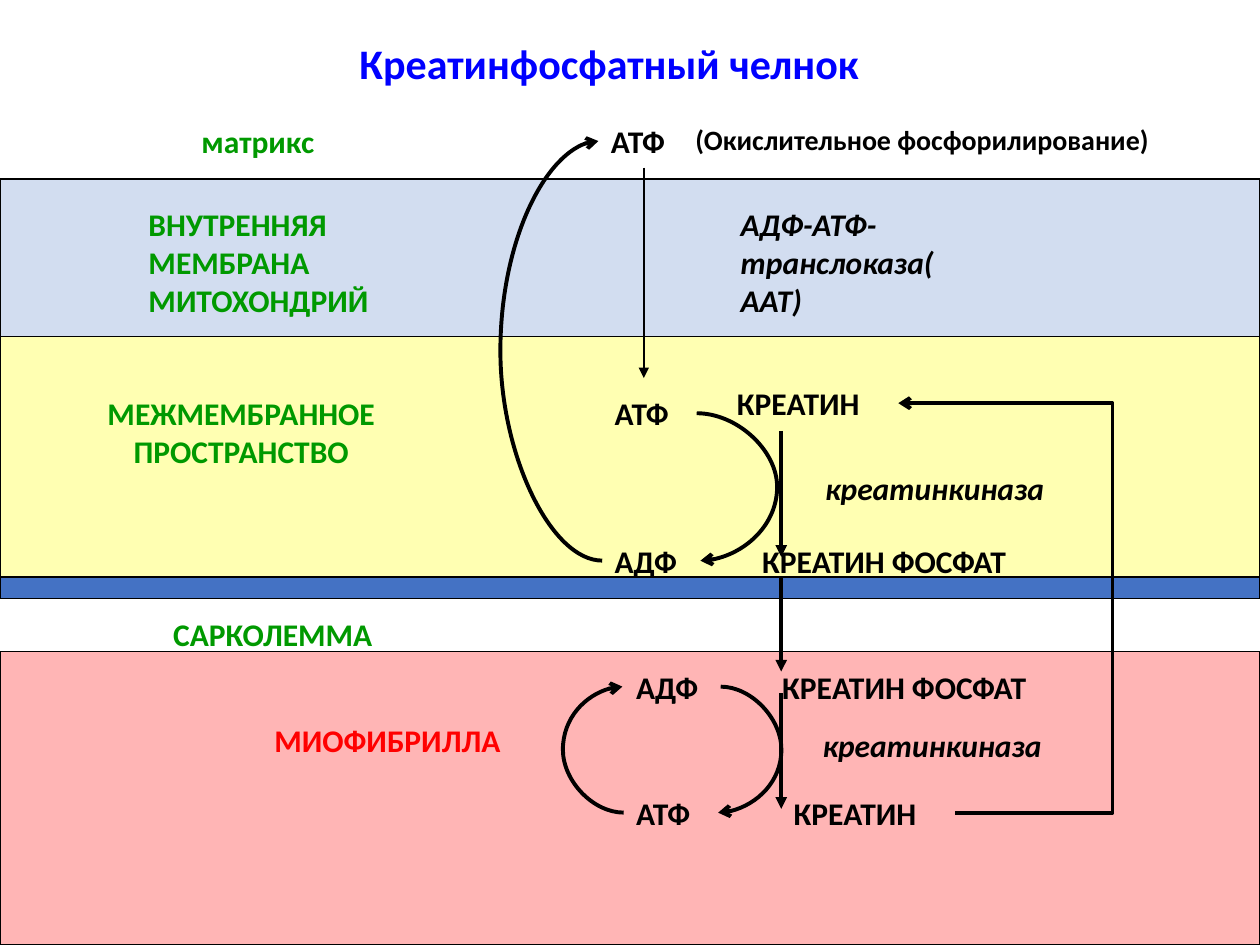
from lxml import etree
from pptx import Presentation
from pptx.dml.color import RGBColor
from pptx.enum.shapes import MSO_CONNECTOR, MSO_SHAPE
from pptx.enum.text import MSO_AUTO_SIZE, PP_ALIGN
from pptx.oxml.ns import qn
from pptx.util import Inches, Pt

STRAIGHT, ELBOW, CURVE = MSO_CONNECTOR.STRAIGHT, MSO_CONNECTOR.ELBOW, MSO_CONNECTOR.CURVE
RECTANGLE = MSO_SHAPE.RECTANGLE
LEFT, CENTER = PP_ALIGN.LEFT, PP_ALIGN.CENTER
FIT_SHAPE = MSO_AUTO_SIZE.SHAPE_TO_FIT_TEXT

BLACK = RGBColor(0x00, 0x00, 0x00)
GREEN = RGBColor(0x00, 0x99, 0x00)
RED = RGBColor(0xFF, 0x00, 0x00)
BLUE = RGBColor(0x00, 0x00, 0xFF)
YELLOW = RGBColor(0xFF, 0xFF, 0x00)
STEEL = RGBColor(0x44, 0x72, 0xC4)

SLIDE_W, SLIDE_H = 10, 7.5
CREATINE_X = 6.2


def add_band(s, top, height, color, opacity=100):
    """Full-width compartment; opacity is in percent."""
    sp = s.shapes.add_shape(RECTANGLE, 0, Inches(top), Inches(SLIDE_W), Inches(height))
    sp.shadow.inherit = False
    sp.fill.solid()
    sp.fill.fore_color.rgb = color
    sp.line.color.rgb = BLACK
    sp.line.width = Pt(0.75)
    if opacity < 100:
        clr = sp.fill._xPr.find(qn("a:solidFill"))[0]
        etree.SubElement(clr, qn("a:alpha")).set("val", str(opacity * 1000))


def add_label(s, text, left, top, width, height=0.4, color=BLACK, size=18,
              italic=False, align=LEFT, wrap=False):
    sp = s.shapes.add_textbox(Inches(left), Inches(top), Inches(width), Inches(height))
    tf = sp.text_frame
    tf.word_wrap = wrap
    tf.auto_size = FIT_SHAPE
    tf.text = text
    p = tf.paragraphs[0]
    p.alignment = align
    font = p.runs[0].font
    font.name, font.size, font.bold, font.italic = "Calibri", Pt(size), True, italic
    font.color.rgb = color


def add_arrow(s, start, end, kind=STRAIGHT, via_x=None, head="triangle", width=2.25):
    """Arrow from start to end; via_x is where a curve or elbow turns back."""
    c = s.shapes.add_connector(kind, *(Inches(v) for v in (*start, *end)))
    c.line.color.rgb = BLACK
    c.line.width = Pt(width)
    etree.SubElement(c.line._get_or_add_ln(), qn("a:tailEnd")).set("type", head)
    sp_pr = c._element.spPr
    etree.SubElement(sp_pr, qn("a:effectLst"))
    if via_x is not None:
        ratio = (via_x - start[0]) / (end[0] - start[0])
        guide = etree.SubElement(sp_pr.find(".//" + qn("a:avLst")), qn("a:gd"))
        guide.set("name", "adj1")
        guide.set("fmla", f"val {round(ratio * 100000)}")


def add_title(s, left, top, width):
    add_label(s, "Креатинфосфатный челнок", left, top, width, 0.5, BLUE, 24,
              align=CENTER, wrap=True)


def add_matrix(s, top):
    add_label(s, "матрикс", 1.5, top, 1.25, color=GREEN, wrap=True)
    add_label(s, "АТФ", 4.75, top, 0.75)
    add_label(s, "(Окислительное фосфорилирование)", 5.42, top, 4.4, 0.37, size=16)


def add_inner_membrane(s, top, height):
    add_band(s, top, height, STEEL, 24)
    text_top = top + 0.16
    add_label(s, "ВНУТРЕННЯЯ МЕМБРАНА МИТОХОНДРИЙ", 1.08, text_top, 2.25, 1, GREEN, wrap=True)
    add_label(s, "АДФ-АТФ-транслоказа(ААТ)", 5.78, text_top, 1.85, 1, italic=True, wrap=True)


def add_kinase_step(s, nucleotides, nucleotide_left, substrates):
    """Creatine kinase reaction; each substrate is (text, left, top, width)."""
    for (text, top), (name, left, name_top, width) in zip(nucleotides, substrates):
        add_label(s, text, nucleotide_left, top, 0.76)
        add_label(s, name, left, name_top, width)


def add_intermembrane_space(s, top, height):
    add_band(s, top, height, YELLOW, 30)
    add_label(s, "МЕЖМЕМБРАННОЕ ПРОСТРАНСТВО", 0.5, top + 0.41, 2.83, 0.7, GREEN,
              align=CENTER, wrap=True)
    upper, lower = top + 0.41, top + 1.58
    add_kinase_step(s, [("АТФ", upper), ("АДФ", lower)], 4.78,
                    [("КРЕАТИН", 5.75, top + 0.33, 1.38),
                     ("КРЕАТИН ФОСФАТ", 5.95, lower, 2.59)])
    add_label(s, "креатинкиназа", 6.45, top + 1, 2.12, italic=True)
    add_arrow(s, (CREATINE_X, top + 0.75), (CREATINE_X, top + 1.75))
    add_arrow(s, (5.53, upper + 0.2), (5.56, lower + 0.2), CURVE, 6.17, "arrow")


def add_sarcolemma(s, top, height):
    add_band(s, top, height, STEEL)
    add_label(s, "САРКОЛЕММА", 0.75, top + 0.25, 2.83, color=GREEN, align=CENTER, wrap=True)


def add_myofibril(s, top, height):
    add_band(s, top, height, RED, 29)
    add_label(s, "МИОФИБРИЛЛА", 2.08, top + 0.5, 2.24, color=RED)
    upper, lower = top + 0.08, top + 1.08
    add_kinase_step(s, [("АДФ", upper), ("АТФ", lower)], 4.95,
                    [("КРЕАТИН ФОСФАТ", 6.11, upper, 2.59),
                     ("КРЕАТИН", CREATINE_X, lower, 1.38)])
    add_label(s, "креатинкиназа", 6.43, top + 0.54, 2.12, italic=True)
    add_arrow(s, (CREATINE_X, top + 0.33), (CREATINE_X, top + 1.25))
    add_arrow(s, (5.72, upper + 0.2), (5.7, lower + 0.2), CURVE, CREATINE_X, "arrow")
    add_arrow(s, (4.95, lower + 0.2), (4.94, upper + 0.2), CURVE, 4.46, "arrow")


def add_transport(s):
    """Arrows that carry substances from one compartment to another."""
    add_arrow(s, (5.11, 1.33), (5.11, 3), width=1.5)
    add_arrow(s, (CREATINE_X, 4.58), (CREATINE_X, 5.33))
    add_arrow(s, (4.78, 4.45), (4.75, 1.12), CURVE, 3.97, "arrow")
    add_arrow(s, (7.58, 6.45), (7.13, 3.2), ELBOW, 8.83, "arrow")


def main():
    prs = Presentation()
    prs.slide_width, prs.slide_height = Inches(SLIDE_W), Inches(SLIDE_H)
    s = prs.slides.add_slide(prs.slide_layouts[6])
    add_title(s, 0.5, 0.25, 8.67)
    add_matrix(s, 0.92)
    add_inner_membrane(s, 1.42, 1.25)
    add_intermembrane_space(s, 2.67, 1.92)
    add_sarcolemma(s, 4.58, 0.17)
    add_myofibril(s, 5.17, 2.33)
    add_transport(s)
    prs.save("out.pptx")


if __name__ == "__main__":
    main()
